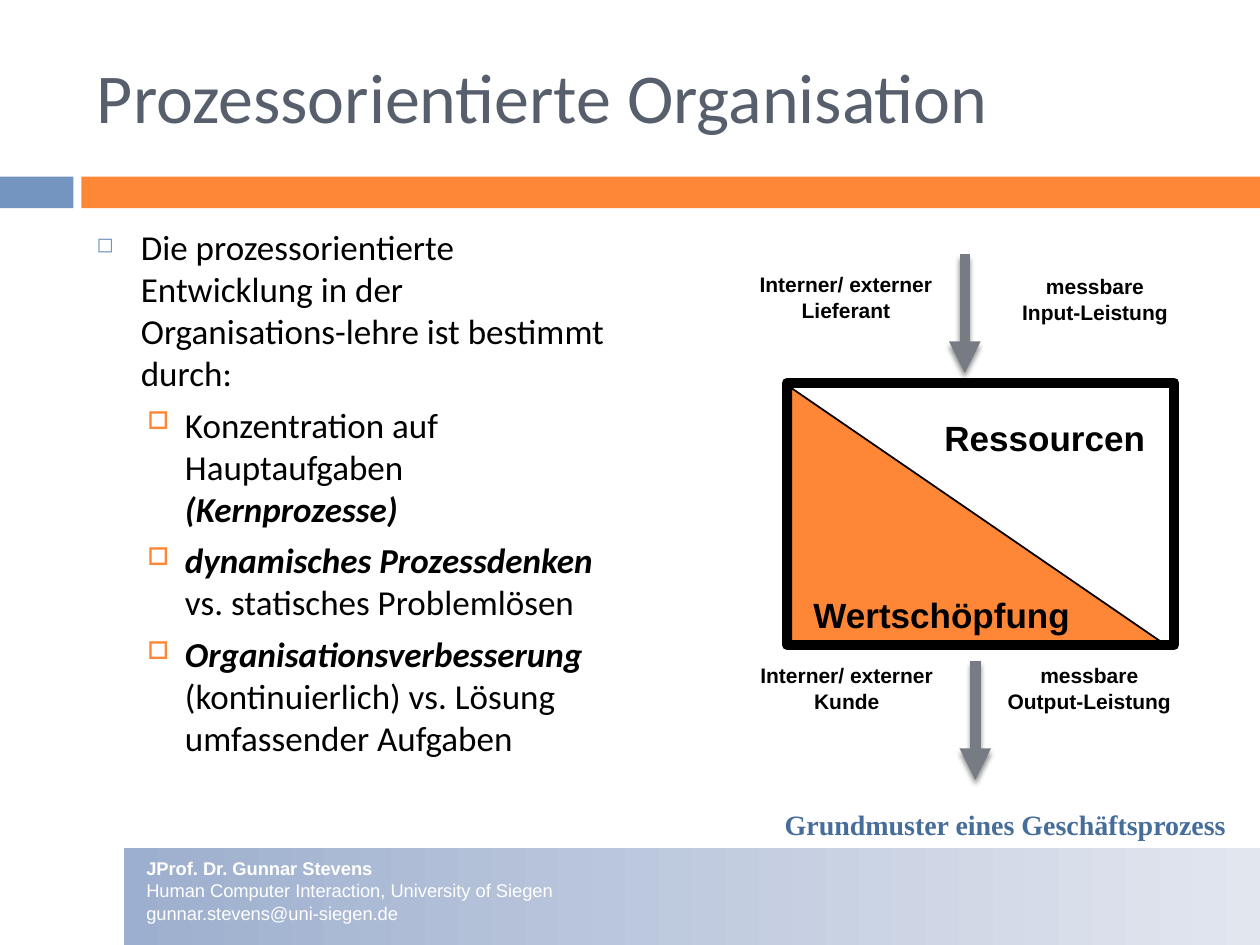
from lxml import etree
from pptx import Presentation
from pptx.dml.color import RGBColor
from pptx.enum.shapes import MSO_CONNECTOR, MSO_SHAPE
from pptx.enum.text import MSO_ANCHOR, PP_ALIGN
from pptx.oxml.ns import qn
from pptx.util import Cm, Pt

BLUE = RGBColor(0x73, 0x95, 0xBF)
ORANGE = RGBColor(0xFE, 0x86, 0x37)
SLATE = RGBColor(0x57, 0x5F, 0x6D)
GREY = RGBColor(0x77, 0x7C, 0x84)
CAPTION_BLUE = RGBColor(0x47, 0x6D, 0x9B)
FOOTER_START = RGBColor(0x9D, 0xAF, 0xCE)
FOOTER_END = RGBColor(0xE2, 0xE6, 0xEF)
BLACK = RGBColor(0, 0, 0)
WHITE = RGBColor(0xFF, 0xFF, 0xFF)


def lengths(*values):
    return [Cm(v) for v in values]


def add_run(p, text, size=12, font="Arial", color=BLACK, bold=False, italic=False):
    r = p.add_run()
    r.text = text
    r.font.size = Pt(size)
    r.font.name = font
    r.font.color.rgb = color
    r.font.bold = bold
    r.font.italic = italic


def add_text(s, box, lines, align=PP_ALIGN.LEFT, spacing=1.04, wrap=True, **fmt):
    tf = s.shapes.add_textbox(*lengths(*box)).text_frame
    tf.word_wrap = wrap
    for i, line in enumerate(lines):
        p = tf.paragraphs[0] if i == 0 else tf.add_paragraph()
        p.alignment = align
        p.line_spacing = spacing
        add_run(p, line, **fmt)
    return tf


def add_box(s, box, fill=None, line=None, width=1, kind=MSO_SHAPE.RECTANGLE):
    sp = s.shapes.add_shape(kind, *lengths(*box))
    sp.shadow.inherit = False
    if fill is None:
        sp.fill.background()
    else:
        sp.fill.solid()
        sp.fill.fore_color.rgb = fill
    if line is None:
        sp.line.fill.background()
    else:
        sp.line.color.rgb = line
        sp.line.width = Pt(width)
    return sp


def add_arrow(s, x, y, length):
    c = s.shapes.add_connector(MSO_CONNECTOR.STRAIGHT, *lengths(x, y, x, y + length))
    c.line.color.rgb = GREY
    c.line.width = Pt(6)
    etree.SubElement(c.line._get_or_add_ln(), qn("a:tailEnd"), type="triangle")
    effects = etree.SubElement(c._element.spPr, qn("a:effectLst"))
    shadow = etree.SubElement(effects, qn("a:outerShdw"), blurRad=str(Pt(3)),
                              dist=str(Pt(2.4)), dir="5400000", rotWithShape="0")
    color = etree.SubElement(shadow, qn("a:srgbClr"), val=str(BLACK))
    etree.SubElement(color, qn("a:alpha"), val="45000")


def set_bullet(p, char, color, percent, left, hang):
    pPr = p._p.get_or_add_pPr()
    pPr.set("marL", str(Cm(left)))
    pPr.set("indent", str(-Cm(hang)))
    clr = etree.SubElement(pPr, qn("a:buClr"))
    etree.SubElement(clr, qn("a:srgbClr"), val=str(color))
    etree.SubElement(pPr, qn("a:buSzPct"), val=str(percent * 1000))
    etree.SubElement(pPr, qn("a:buChar"), char=char)


def place_title(s, box, text):
    sp = s.shapes.title
    sp.left, sp.top, sp.width, sp.height = lengths(*box)
    tf = sp.text_frame
    tf.vertical_anchor = MSO_ANCHOR.MIDDLE
    p = tf.paragraphs[0]
    p.alignment = PP_ALIGN.LEFT
    p.line_spacing = 0.95
    add_run(p, text, size=40, font="Calibri", color=SLATE)


def add_band(s, box):
    x, y, w, h = box
    tab, gap = 1.48, 0.16
    add_box(s, (x, y, tab, h), BLUE)
    add_box(s, (x + tab + gap, y, w - tab - gap, h), ORANGE)


def add_footer(s, box):
    x, y, w, h = box
    sp = add_box(s, box, FOOTER_START)
    sp.fill.gradient()
    sp.fill.gradient_angle = 0
    for stop, color in zip(sp.fill.gradient_stops, (FOOTER_START, FOOTER_END)):
        stop.color.rgb = color
    text_box = (x + 0.2, y + 0.03, 12.7, 1.65)
    tf = add_text(s, text_box, ["JProf. Dr. Gunnar Stevens",
                                "Human Computer Interaction, University of Siegen",
                                "gunnar.stevens@uni-siegen.de"], size=10.5, color=WHITE)
    tf.paragraphs[0].runs[0].font.bold = True


def add_body(s, box):
    tf = s.shapes.add_textbox(*lengths(*box)).text_frame
    tf.word_wrap = True
    p = tf.paragraphs[0]
    set_bullet(p, "◻", BLUE, 60, 0.89, 0.89)
    add_run(p, "Die prozessorientierte Entwicklung in der Organisations-lehre "
               "ist bestimmt durch:", size=20, font="Calibri")
    points = [
        [("Konzentration auf Hauptaufgaben ", False), ("(Kernprozesse)", True)],
        [("dynamisches Prozessdenken", True), (" vs. statisches Problemlösen", False)],
        [("Organisationsverbesserung", True),
         (" (kontinuierlich) vs. Lösung umfassender Aufgaben", False)],
    ]
    for point in points:
        p = tf.add_paragraph()
        p.level = 1
        set_bullet(p, "□", ORANGE, 70, 1.78, 0.76)
        p.space_before = Pt(5.5)
        for text, strong in point:
            add_run(p, text, size=20, font="Calibri", bold=strong, italic=strong)


def add_process(s, box):
    x, y, w, h = box
    add_box(s, (x + 1.5, y + 2.69, 7.59, 5.21), ORANGE, BLACK, 1, MSO_SHAPE.RIGHT_TRIANGLE)
    add_box(s, (x + 1.42, y + 2.59, 7.8, 5.28), line=BLACK, width=6)
    for dx, dy, width, text in [(1.7, 6.68, 5.74, "Wertschöpfung"),
                                (4.34, 3.1, 4.6, "Ressourcen")]:
        add_text(s, (x + dx, y + dy, width, 1.09), [text], wrap=False, size=20, bold=True)
    for dx, dy in [(5, 0), (5.21, 8.2)]:
        add_arrow(s, x + dx, y + dy, 2.39)
    labels = [
        (0, 0.2, 5.21, ["Interner/ externer Lieferant"]),
        (5.21, 0.23, 4.83, ["messbare", "Input-Leistung"]),
        (0.23, 8.08, 4.78, ["Interner/ externer Kunde"]),
        (5.21, 8.08, 4.6, ["messbare", "Output-Leistung"]),
    ]
    for dx, dy, width, lines in labels:
        add_text(s, (x + dx, y + dy, width, 1.3), lines, align=PP_ALIGN.CENTER, bold=True)
    add_text(s, (x + 1.12, y + h - 0.91, w - 1.12, 0.91),
             ["Grundmuster eines Geschäftsprozess"], wrap=False, size=16,
             font="Times New Roman", color=CAPTION_BLUE, bold=True)


def main():
    prs = Presentation()
    prs.slide_width, prs.slide_height = lengths(25.4, 19.05)
    s = prs.slides.add_slide(prs.slide_layouts[5])
    add_band(s, (0, 3.56, 25.4, 0.64))
    add_footer(s, (2.5, 17.1, 22.9, 1.95))
    place_title(s, (1.7, 0.64, 22.66, 2.74), "Prozessorientierte Organisation")
    add_body(s, (1.7, 4.42, 10.8, 12.7))
    add_process(s, (14.45, 5.13, 10.65, 11.91))
    prs.save("out.pptx")


if __name__ == "__main__":
    main()
